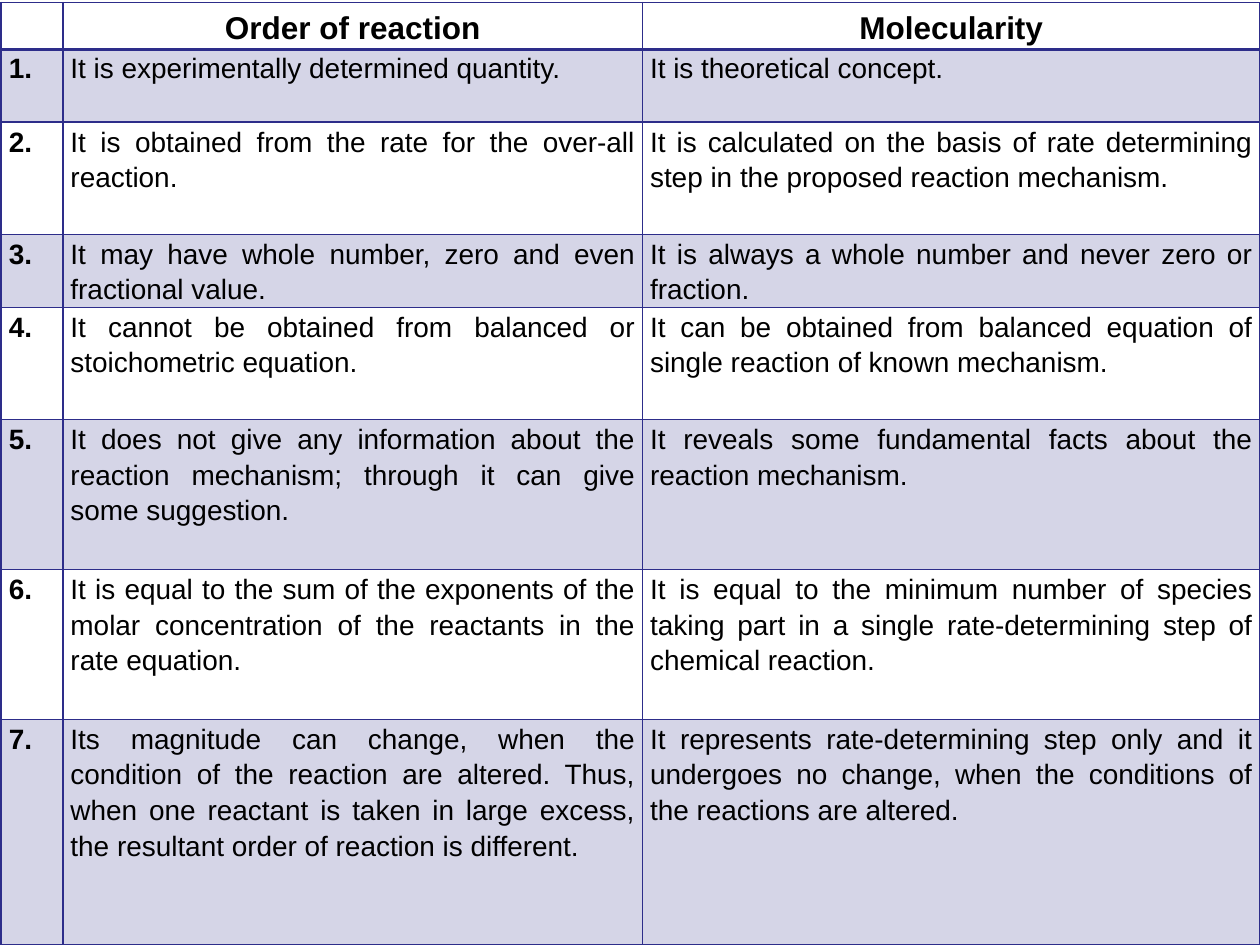
"""Build a slide with a table comparing order of reaction and molecularity."""
import lxml.etree
import pptx
import pptx.dml.color
import pptx.enum.text
import pptx.oxml.ns
import pptx.util

THEME = {
    "font": "Arial",
    "ink": "000000",
    "accent": "2D2D8A",
    "band_opacity": 20,
    "header_size": 18,
    "body_size": 16,
    "line_spacing": 1.15,
    "thin": 1,
    "thick": 2,
}
ALIGN = pptx.enum.text.PP_ALIGN
ANCHOR = pptx.enum.text.MSO_ANCHOR
INCH = pptx.util.Inches(1)
COLUMN_WIDTHS = [0.49, 4.6, 4.9]
ROW_HEIGHTS = [0.37, 0.58, 0.89, 0.58, 0.89, 1.19, 1.19, 1.79]
HEADER = ("", "Order of reaction", "Molecularity")
COMPARISONS = [
    ("It is experimentally determined quantity.",
     "It is theoretical concept."),
    ("It is obtained from the rate for the over-all reaction.",
     "It is calculated on the basis of rate determining step in the proposed reaction mechanism."),
    ("It may have whole number, zero and even fractional value.",
     "It is always a whole number and never zero or fraction."),
    ("It cannot be obtained from balanced or stoichometric equation.",
     "It can be obtained from balanced equation of single reaction of known mechanism."),
    ("It does not give any information about the reaction mechanism; through it can give some suggestion.",
     "It reveals some fundamental facts about the reaction mechanism."),
    ("It is equal to the sum of the exponents of the molar concentration of the reactants in the rate equation.",
     "It is equal to the minimum number of species taking part in a single rate-determining step of "
     "chemical reaction."),
    ("Its magnitude can change, when the condition of the reaction are altered. Thus, when one reactant "
     "is taken in large excess, the resultant order of reaction is different.",
     "It represents rate-determining step only and it undergoes no change, when the conditions of the "
     "reactions are altered."),
]


def write_text(cell, text, size, bold, align, anchor):
    cell.margin_left = cell.margin_right = pptx.util.Inches(0.06)
    cell.margin_top = cell.margin_bottom = 0
    cell.vertical_anchor = anchor
    paragraph = cell.text_frame.paragraphs[0]
    paragraph.alignment = align
    paragraph.line_spacing = THEME["line_spacing"]
    run = paragraph.add_run()
    run.text = text
    run.font.name = THEME["font"]
    run.font.size = pptx.util.Pt(size)
    run.font.bold = bold
    run.font.color.rgb = pptx.dml.color.RGBColor.from_string(THEME["ink"])


def style_cell(cell, banded, bottom_width):
    properties = cell._tc.get_or_add_tcPr()
    qualify = pptx.oxml.ns.qn
    if banded:
        cell.fill.solid()
        cell.fill.fore_color.rgb = pptx.dml.color.RGBColor.from_string(THEME["accent"])
        color = properties.find(".//" + qualify("a:srgbClr"))
        lxml.etree.SubElement(color, qualify("a:alpha"), val=str(THEME["band_opacity"] * 1000))
    else:
        cell.fill.background()
    for position, side in enumerate(("L", "R", "T", "B")):
        width = bottom_width if side == "B" else THEME["thin"]
        line = lxml.etree.Element(qualify(f"a:ln{side}"), w=str(pptx.util.Pt(width)))
        fill = lxml.etree.SubElement(line, qualify("a:solidFill"))
        lxml.etree.SubElement(fill, qualify("a:srgbClr"), val=THEME["accent"])
        properties.insert(position, line)


presentation = pptx.Presentation()
presentation.slide_width = 10 * INCH
presentation.slide_height = pptx.util.Inches(7.5)
slide = presentation.slides.add_slide(presentation.slide_layouts[6])

rows = [HEADER] + [(f"{number}.", *pair) for number, pair in enumerate(COMPARISONS, 1)]
table = slide.shapes.add_table(
    len(rows), len(HEADER), pptx.util.Inches(0.01), pptx.util.Inches(0.02),
    pptx.util.Inches(sum(COLUMN_WIDTHS)), pptx.util.Inches(sum(ROW_HEIGHTS)),
).table
table.first_row = table.horz_banding = False
for column, width in zip(table.columns, COLUMN_WIDTHS):
    column.width = pptx.util.Inches(width)
for row, height in zip(table.rows, ROW_HEIGHTS):
    row.height = pptx.util.Inches(height)

for row_index, texts in enumerate(rows):
    is_header = row_index == 0
    for column_index, text in enumerate(texts):
        cell = table.cell(row_index, column_index)
        is_number = column_index == 0
        body_align = ALIGN.LEFT if is_number else ALIGN.JUSTIFY
        write_text(
            cell, text,
            size=THEME["header_size"] if is_header else THEME["body_size"],
            bold=is_header or is_number,
            align=ALIGN.CENTER if is_header else body_align,
            anchor=ANCHOR.MIDDLE if is_header else ANCHOR.TOP,
        )
        style_cell(cell, banded=row_index % 2 == 1,
                   bottom_width=THEME["thick"] if is_header else THEME["thin"])

presentation.save("out.pptx")
